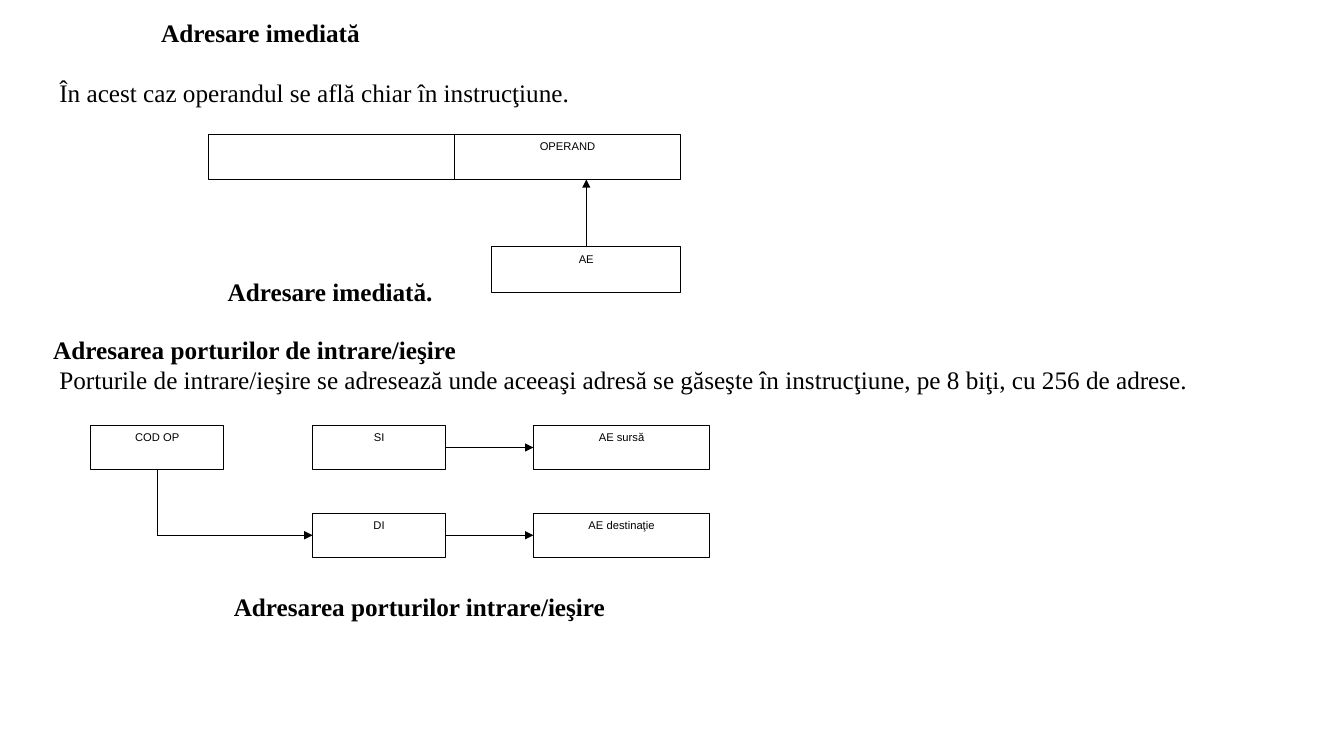
import pptx
import pptx.util
import pptx.dml.color
import pptx.enum.shapes
import pptx.enum.text
import pptx.oxml
import pptx.oxml.ns

Inches, Pt = pptx.util.Inches, pptx.util.Pt
RGBColor = pptx.dml.color.RGBColor
ALIGN = pptx.enum.text.PP_ALIGN
SHAPE = pptx.enum.shapes.MSO_SHAPE
STRAIGHT = pptx.enum.shapes.MSO_CONNECTOR.STRAIGHT

BLACK = RGBColor(0, 0, 0)
WHITE = RGBColor(255, 255, 255)
TOP, LEFT, BOTTOM, RIGHT = range(4)


def write(p, text, size=18, font="Times New Roman", bold=False,
          align=ALIGN.JUSTIFY, margin=0, indent=0, before=0):
    p.alignment = align
    p.space_before = Pt(before)
    pPr = p._p.get_or_add_pPr()
    pPr.set("marL", str(Inches(margin)))
    pPr.set("indent", str(Inches(indent)))
    r = p.add_run()
    r.text = text
    r.font.size, r.font.name, r.font.bold = Pt(size), font, bold
    r.font.color.rgb = BLACK


def text_box(s, x, y, w, h, wrap=True):
    tf = s.shapes.add_textbox(Inches(x), Inches(y), Inches(w), Inches(h)).text_frame
    tf.word_wrap = wrap
    return tf


def block(group, x, y, w, h, label=""):
    sp = group.shapes.add_shape(SHAPE.RECTANGLE, Inches(x), Inches(y),
                                Inches(w), Inches(h))
    sp.shadow.inherit = False
    sp.fill.solid()
    sp.fill.fore_color.rgb = WHITE
    sp.line.color.rgb = BLACK
    sp.line.width = Pt(0.75)
    tf = sp.text_frame
    tf.vertical_anchor = pptx.enum.text.MSO_ANCHOR.TOP
    if label:
        write(tf.paragraphs[0], label, size=8, font="Arial", align=ALIGN.CENTER)
    return sp


def line(group, x1, y1, x2, y2, begin=None, end=None, arrow=True):
    """begin and end are (shape, side) pairs that the line is joined to."""
    c = group.shapes.add_connector(STRAIGHT, Inches(x1), Inches(y1),
                                   Inches(x2), Inches(y2))
    c.line.color.rgb = BLACK
    c.line.width = Pt(0.75)
    if arrow:
        tail = pptx.oxml.parse_xml(
            f'<a:tailEnd {pptx.oxml.ns.nsdecls("a")} type="triangle"/>')
        c.line._get_or_add_ln().append(tail)
    c._element.spPr.append(
        pptx.oxml.parse_xml(f'<a:effectLst {pptx.oxml.ns.nsdecls("a")}/>'))
    if begin:
        c.begin_connect(*begin)
    if end:
        c.end_connect(*end)


def intro(s, x, y, w, h):
    tf = text_box(s, x, y, w, h)
    write(tf.paragraphs[0], "Adresare imediată", bold=True, margin=1.5)
    write(tf.add_paragraph(), "În acest caz operandul se află chiar în instrucţiune.",
          indent=0.49, before=21.5)


def immediate_diagram(s, x, y, w, h):
    g = s.shapes.add_group_shape()
    box_h, code_w, ae_w = 0.45, 2.44, 1.87
    ae_x, ae_y = x + w - ae_w, y + h - box_h
    # Instruction: operation code and operand
    block(g, x, y, code_w, box_h)
    block(g, x + code_w, y, w - code_w, box_h, "OPERAND")
    # Effective address pointing at the operand
    ae = block(g, ae_x, ae_y, ae_w, box_h, "AE")
    mid = ae_x + ae_w / 2
    line(g, mid, ae_y, mid, y + box_h, begin=(ae, TOP))


def ports_text(s, x, y, w, h):
    tf = text_box(s, x + 0.43, y, 4.46, 0.4)
    write(tf.paragraphs[0], "Adresarea porturilor de intrare/ieşire", bold=True,
          margin=1.5, indent=-1.5)
    tf = text_box(s, x, y + h - 0.4, w, 0.4)
    write(tf.paragraphs[0],
          "Porturile de intrare/ieşire se adresează unde aceeaşi adresă se găseşte "
          "în instrucţiune, pe 8 biţi, cu 256 de adrese.", indent=0.49)


def ports_diagram(s, x, y, w, h):
    g = s.shapes.add_group_shape()
    box_w, box_h, ae_w = 1.32, 0.44, 1.75
    reg_x, ae_x = x + 2.2, x + w - ae_w
    code = block(g, x, y, box_w, box_h, "COD OP")
    # Each register leads to its effective address
    rows = [("SI", "AE sursă", y), ("DI", "AE destinaţie", y + h - box_h)]
    for reg_name, ae_name, top in rows:
        reg = block(g, reg_x, top, box_w, box_h, reg_name)
        ae = block(g, ae_x, top, ae_w, box_h, ae_name)
        mid = top + box_h / 2
        line(g, reg_x + box_w, mid, ae_x, mid, (reg, RIGHT), (ae, LEFT))
    # Path from the operation code to the last register, DI
    code_mid = x + box_w / 2
    line(g, code_mid, y + box_h, code_mid, mid, begin=(code, BOTTOM), arrow=False)
    line(g, code_mid, mid, reg_x, mid, end=(reg, LEFT))


def caption(s, x, y, w, h, text):
    tf = text_box(s, x, y, w, h, wrap=False)
    write(tf.paragraphs[0], text, bold=True, align=ALIGN.LEFT)


def main():
    prs = pptx.Presentation()
    prs.slide_width, prs.slide_height = Inches(13.33), Inches(7.5)
    s = prs.slides.add_slide(prs.slide_layouts[6])
    intro(s, 0, 0.12, 9.69, 1.01)
    immediate_diagram(s, 2.07, 1.33, 4.68, 1.57)
    caption(s, 2.16, 2.69, 2.25, 0.4, "Adresare imediată.")
    ports_text(s, 0, 3.27, 13.13, 0.7)
    ports_diagram(s, 0.9, 4.22, 6.14, 1.31)
    caption(s, 2.22, 5.82, 3.92, 0.4, "Adresarea porturilor intrare/ieşire")
    prs.save("out.pptx")


if __name__ == "__main__":
    main()
